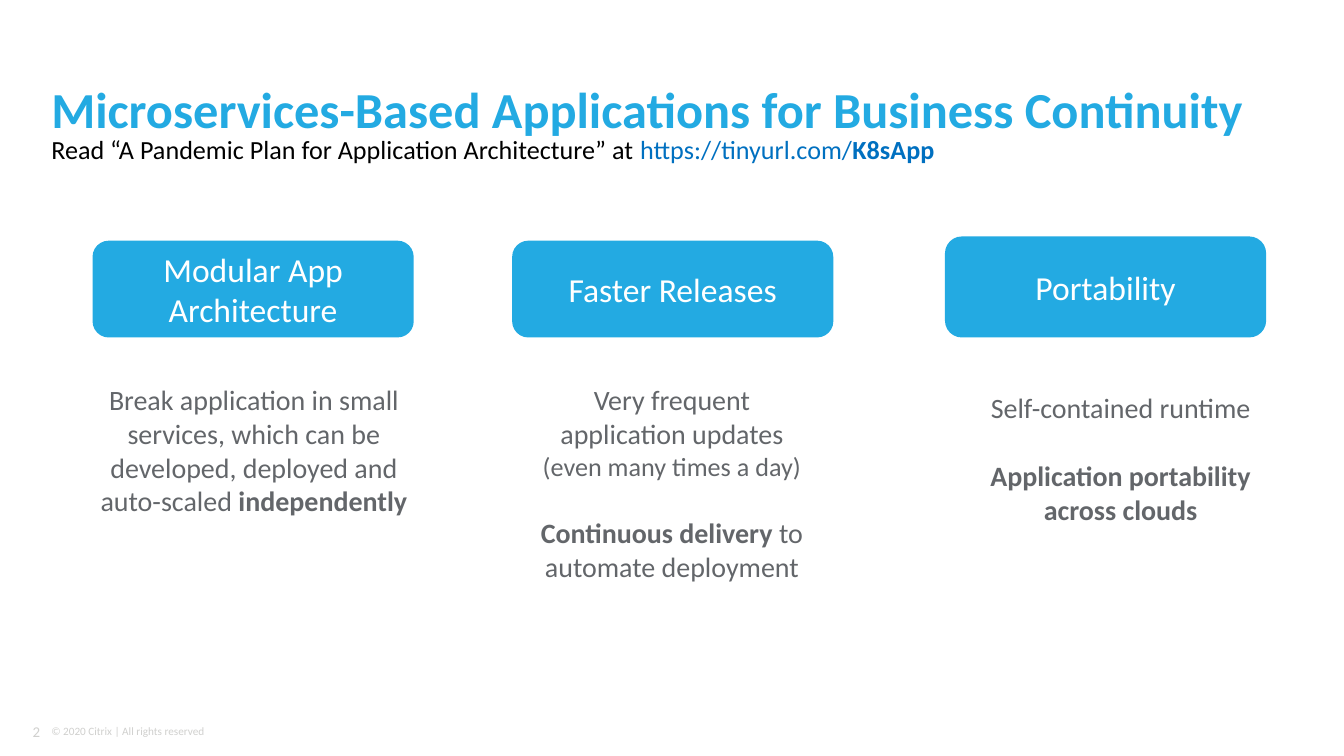
from pptx import Presentation
from pptx.dml.color import RGBColor
from pptx.enum.shapes import MSO_SHAPE
from pptx.enum.text import MSO_ANCHOR, PP_ALIGN
from pptx.util import Cm, Pt

COLORS = {
    "accent": "23AAE2",
    "white": "FFFFFF",
    "body": "63666A",
    "black": "000000",
    "link": "0070C0",
    "footer": "D0D0CE",
}
FONT = "Calibri"
INSETS = (0.18, 0.1)
BLANK_LINE = 18.3

# Header: left, top, width, height of each column's card and text, in cm.
# A paragraph is (runs, size, space before); a run is (text, bold).
COLUMNS = [
    ("Modular App Architecture", (1.75, 4.55, 6.07, 1.83), (1.55, 7.14, 6.5, 4.04), [
        ([("Break application in small services, which can be developed, "
           "deployed and auto-scaled ", False), ("independently", True)], 15, 0),
    ]),
    ("Faster Releases", (9.68, 4.55, 6.07, 1.83), (9.45, 7.14, 6.5, 4.62), [
        ([("Very frequent", False)], 15, 0),
        ([("application updates", False)], 15, 0),
        ([("(even many times a day)", False)], 14, 0),
        ([("Continuous delivery ", True), ("to automate deployment", False)], 15, BLANK_LINE),
    ]),
    ("Portability", (17.86, 4.47, 6.07, 1.91), (17.93, 7.29, 6.5, 5.33), [
        ([("Self-contained runtime", False)], 15, 0),
        ([("Application portability across clouds", True)], 15, BLANK_LINE),
    ]),
]


def rgb(name):
    return RGBColor.from_string(COLORS[name])


def set_font(font, size, color, bold=False):
    font.name = FONT
    font.size = Pt(size)
    font.bold = bold
    font.color.rgb = rgb(color)


def set_frame(frame, anchor, insets):
    frame.word_wrap = True
    frame.vertical_anchor = anchor
    frame.margin_left = frame.margin_right = Cm(insets[0])
    frame.margin_top = frame.margin_bottom = Cm(insets[1])


def add_box(page, place, anchor=MSO_ANCHOR.TOP, insets=(0, 0)):
    box = page.shapes.add_textbox(*map(Cm, place))
    set_frame(box.text_frame, anchor, insets)
    return box.text_frame


def add_line(page, text, place, size, color, anchor=MSO_ANCHOR.TOP,
             insets=(0, 0), align=PP_ALIGN.LEFT, bold=False):
    para = add_box(page, place, anchor, insets).paragraphs[0]
    para.text = text
    para.alignment = align
    set_font(para.font, size, color, bold)
    return para


def add_subtitle(page):
    para = add_box(page, (0.97, 2.59, 23.5, 0.51)).paragraphs[0]
    para.line_spacing = 0.9
    for text, color, bold in [
        ("Read “A Pandemic Plan for Application Architecture” at ", "black", False),
        ("https://tinyurl.com/", "link", False),
        ("K8sApp", "link", True),
    ]:
        span = para.add_run()
        span.text = text
        set_font(span.font, 14, color, bold)


def add_card(page, text, place):
    card = page.shapes.add_shape(MSO_SHAPE.ROUNDED_RECTANGLE, *map(Cm, place))
    card.shadow.inherit = False
    card.fill.solid()
    card.fill.fore_color.rgb = rgb("accent")
    card.line.fill.background()
    set_frame(card.text_frame, MSO_ANCHOR.MIDDLE, INSETS)
    para = card.text_frame.paragraphs[0]
    para.text = text
    para.alignment = PP_ALIGN.CENTER
    set_font(para.font, 18, "white")


def add_description(page, place, paragraphs):
    frame = add_box(page, place, insets=INSETS)
    for index, (runs, size, before) in enumerate(paragraphs):
        para = frame.add_paragraph() if index else frame.paragraphs[0]
        para.alignment = PP_ALIGN.CENTER
        if before:
            para.space_before = Pt(before)
        set_font(para.font, size, "body")
        for text, bold in runs:
            span = para.add_run()
            span.text = text
            set_font(span.font, size, "body", bold)


def main():
    deck = Presentation()
    deck.slide_width, deck.slide_height = Cm(25.4), Cm(14.29)
    page = deck.slides.add_slide(deck.slide_layouts[6])

    # Footer
    add_line(page, "2", (0.25, 13.56, 0.69, 0.51), 8, "footer",
             insets=INSETS, align=PP_ALIGN.RIGHT)
    add_line(page, "© 2020 Citrix | All rights reserved", (0.97, 13.69, 7.44, 0.25),
             6, "footer", anchor=MSO_ANCHOR.MIDDLE)

    # Title and subtitle
    title = add_line(page, "Microservices-Based Applications for Business Continuity",
                     (0.97, 0.86, 23.5, 1.75), 27, "accent",
                     anchor=MSO_ANCHOR.BOTTOM, bold=True)
    title.line_spacing = 0.76
    add_subtitle(page)

    # Three benefit columns
    for heading, card_place, text_place, paragraphs in COLUMNS:
        add_card(page, heading, card_place)
        add_description(page, text_place, paragraphs)

    deck.save("out.pptx")


if __name__ == "__main__":
    main()
